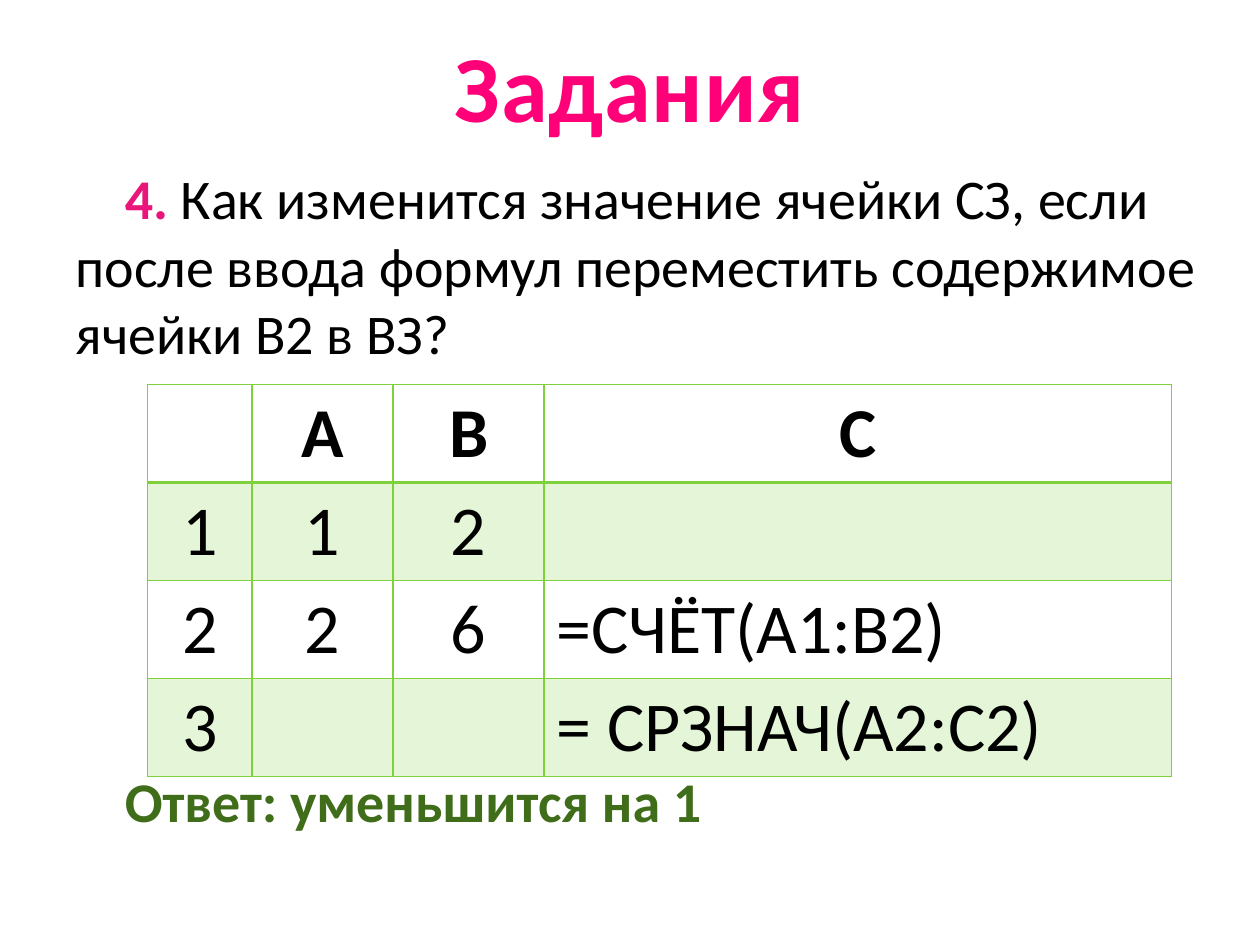
from dataclasses import dataclass

from lxml.etree import SubElement
from pptx import Presentation
from pptx.dml.color import RGBColor as RGB
from pptx.enum.text import MSO_ANCHOR as Anchor, PP_ALIGN as Align
from pptx.oxml import parse_xml
from pptx.oxml.ns import nsdecls, qn
from pptx.util import Inches, Pt


@dataclass(frozen=True)
class Theme:
    font: str = "Calibri"
    text: str = "000000"
    accent: str = "EA157A"
    answer: str = "3F6D19"
    grid: str = "7FD13B"
    title_stops: tuple = ((0.25, "FF0079"), (1, "B40055"))
    title_size: int = 54
    body_size: int = 32
    cell_size: int = 40


THEME = Theme()
WIDTH, HEIGHT = Inches(10), Inches(7.5)
COLUMN_SHARES = (0.83, 1.12, 1.2, 4.98)
CELLS = (
    ("", "A", "B", "C"),
    ("1", "1", "2", ""),
    ("2", "2", "6", "=СЧЁТ(A1:B2)"),
    ("3", "", "", "= СРЗНАЧ(A2:C2)"),
)


def share_box(left, top, width, height):
    """Turn shares of the slide's size into lengths."""
    return (int(WIDTH * left), int(HEIGHT * top),
            int(WIDTH * width), int(HEIGHT * height))


def place(s, box):
    s.left, s.top, s.width, s.height = box


def add_text(p, text, size, color=THEME.text, bold=False, align=None):
    r = p.add_run()
    r.text = text
    r.font.name = THEME.font
    r.font.size = Pt(size)
    r.font.bold = bold
    r.font.color.rgb = RGB.from_string(color)
    if align is not None:
        p.alignment = align
    return r


def fill_title(s, box, text):
    place(s, box)
    tf = s.text_frame
    tf.vertical_anchor = Anchor.MIDDLE
    r = add_text(tf.paragraphs[0], text, THEME.title_size, bold=True,
                 align=Align.CENTER)
    fill = r.font.fill
    fill.gradient()
    fill.gradient_angle = 270
    for stop, (position, color) in zip(fill.gradient_stops, THEME.title_stops):
        stop.position = position
        stop.color.rgb = RGB.from_string(color)
    r.font._element.set("spc", "50")


def remove_bullet(p, indent):
    pPr = p._p.get_or_add_pPr()
    pPr.set("marL", "0")
    pPr.set("indent", str(indent))
    SubElement(pPr, qn("a:buNone"))


def fill_body(s, box, number, question, answer):
    """Set the question above the table and the answer below it."""
    place(s, box)
    tf = s.text_frame
    first, last = tf.paragraphs[0], tf.add_paragraph()
    add_text(first, number, THEME.body_size, THEME.accent, bold=True)
    add_text(first, question, THEME.body_size)
    add_text(last, answer, THEME.body_size, THEME.answer, bold=True)
    last.space_before = Pt(229)
    for p in (first, last):
        remove_bullet(p, Inches(0.39))


def set_borders(cell, widths):
    """Draw the left, right, top and bottom borders, widths in points."""
    tcPr = cell._tc.get_or_add_tcPr()
    for i, (side, width) in enumerate(zip("LRTB", widths)):
        tcPr.insert(i, parse_xml(
            f'<a:ln{side} {nsdecls("a")} w="{Pt(width)}"><a:solidFill>'
            f'<a:srgbClr val="{THEME.grid}"/></a:solidFill></a:ln{side}>'))


def fill_cell(cell, banded):
    if not banded:
        cell.fill.background()
        return
    cell.fill.solid()
    cell.fill.fore_color.rgb = RGB.from_string(THEME.grid)
    color = cell._tc.tcPr.find(".//" + qn("a:srgbClr"))
    SubElement(color, qn("a:alpha"), val="20000")


def add_sheet(slide, box, rows):
    """Add the spreadsheet: a header row, then bands on odd rows."""
    table = slide.shapes.add_table(len(rows), len(rows[0]), *box).table
    for column, share in zip(table.columns, COLUMN_SHARES):
        column.width = int(box[2] * share / sum(COLUMN_SHARES))
    for i, row in enumerate(rows):
        for j, text in enumerate(row):
            cell = table.cell(i, j)
            cell.vertical_anchor = Anchor.MIDDLE
            fill_cell(cell, banded=i % 2 == 1)
            set_borders(cell, (1, 1, 2 if i == 1 else 1, 2 if i == 0 else 1))
            if text:
                align = Align.LEFT if text.startswith("=") else Align.CENTER
                add_text(cell.text_frame.paragraphs[0], text, THEME.cell_size,
                         bold=i == 0, align=align)


def add_task_slide(prs):
    slide = prs.slides.add_slide(prs.slide_layouts[1])
    title, body = slide.placeholders
    fill_title(title, share_box(0.05, 0.02, 0.9, 0.14), "Задания")
    fill_body(body, share_box(0.05, 1 / 6, 0.927, 0.79), "4. ",
              "Как изменится значение ячейки СЗ, если после ввода формул "
              "переместить содержимое ячейки В2 в ВЗ?",
              "Ответ: уменьшится на 1")
    add_sheet(slide, share_box(0.117, 0.407, 0.813, 0.41), CELLS)


def main():
    prs = Presentation()
    prs.slide_width, prs.slide_height = WIDTH, HEIGHT
    add_task_slide(prs)
    prs.save("out.pptx")


if __name__ == "__main__":
    main()
